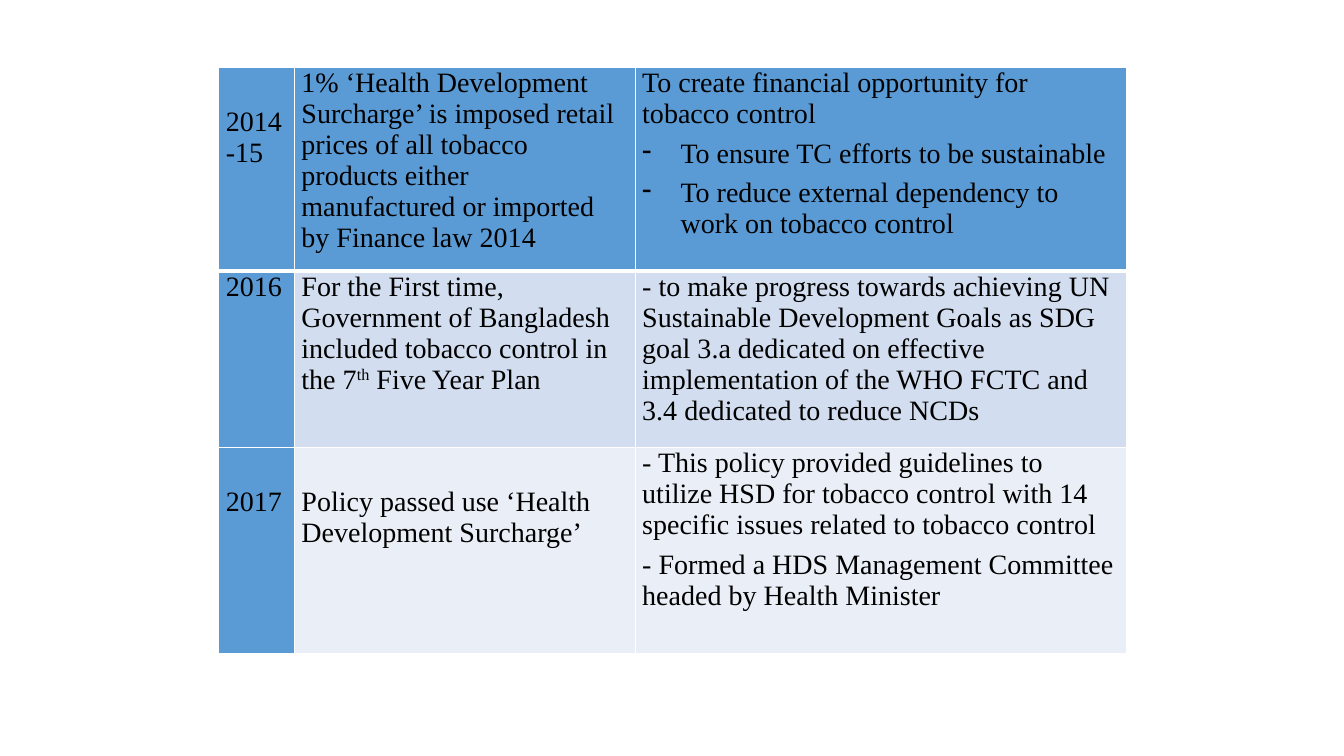
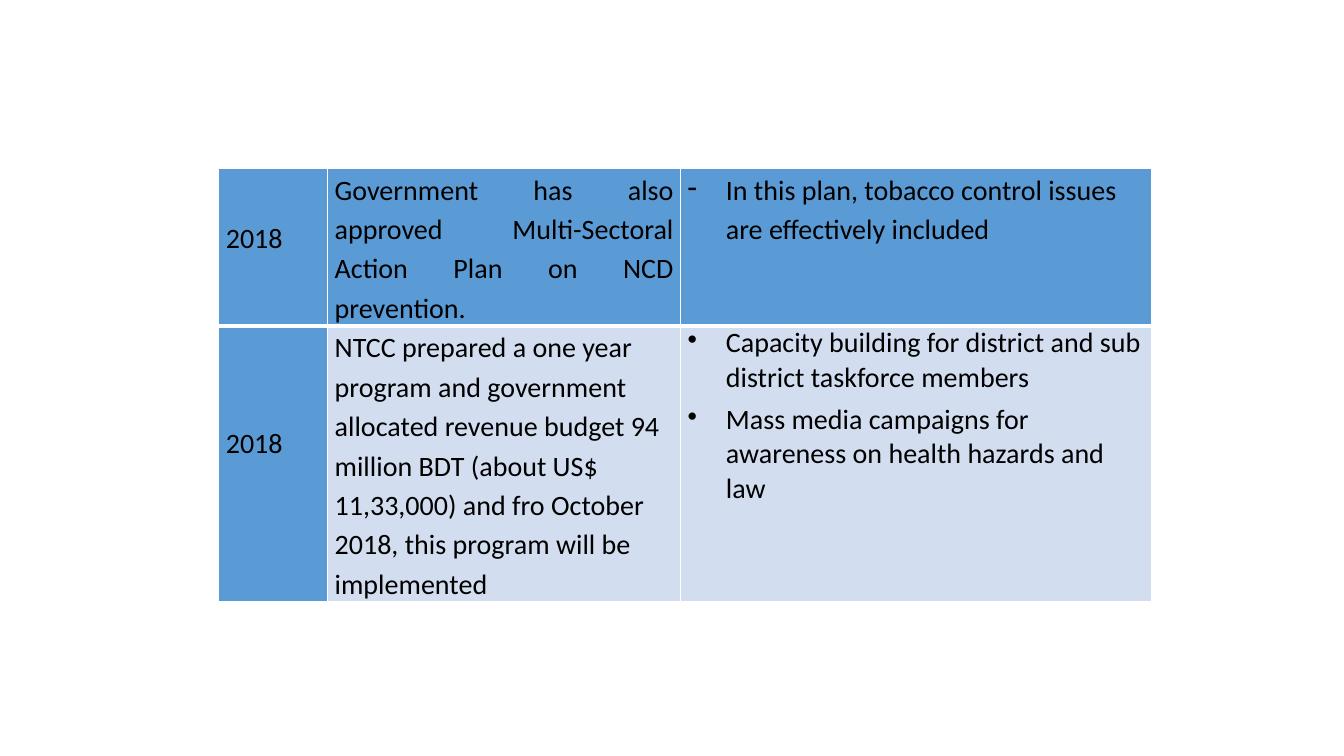
from lxml import etree
from pptx import Presentation
from pptx.dml.color import RGBColor
from pptx.enum.text import PP_ALIGN
from pptx.oxml.ns import qn
from pptx.util import Inches, Pt

LEFT, JUSTIFY = PP_ALIGN.LEFT, PP_ALIGN.JUSTIFY
BLUE, PALE, PALER = "5B9BD5", "D2DEEF", "EAEFF7"
BLACK, WHITE = "000000", "FFFFFF"
ROW_FILLS = [BLUE, PALE, PALER]
SUPERSCRIPT_MARK = "^"

TABLES = [
    {
        "font": "Times New Roman",
        "spacing": 1.0,
        "top": 0.67,
        "columns": [0.75, 3.38, 4.87],
        "rows": [
            (2.02, [
                {"lines": ["2014-15"], "drop": 0.39},
                {"lines": ["1% ‘Health Development Surcharge’ is imposed retail prices of all "
                           "tobacco products either manufactured or imported by Finance law 2014"]},
                {"lines": ["To create financial opportunity for tobacco control",
                           ("-", "To ensure TC efforts to be sustainable"),
                           ("-", "To reduce external dependency to work on tobacco control")]},
            ]),
            (1.75, [
                {"lines": ["2016"]},
                {"lines": ["For the First time, Government of Bangladesh included tobacco "
                           "control in the 7^th^ Five Year Plan"]},
                {"lines": ["- to make progress towards achieving UN Sustainable Development "
                           "Goals as SDG goal 3.a dedicated on effective implementation of the "
                           "WHO FCTC and 3.4 dedicated to reduce NCDs"]},
            ]),
            (2.04, [
                {"lines": ["2017"], "drop": 0.39},
                {"lines": ["Policy passed use ‘Health Development Surcharge’"], "drop": 0.39},
                {"lines": ["- This policy provided guidelines to utilize HSD for tobacco control "
                           "with 14 specific issues related to tobacco control",
                           "- Formed a HDS Management Committee headed by Health Minister"]},
            ]),
        ],
    },
    {
        "font": "Calibri",
        "spacing": 1.15,
        "top": 1.67,
        "columns": [1.08, 3.5, 4.67],
        "rows": [
            (1.55, [
                {"lines": ["2018"], "drop": 0.48},
                {"lines": ["Government has also approved Multi-Sectoral Action Plan on NCD "
                           "prevention."], "align": JUSTIFY},
                {"lines": [("-", "In this plan, tobacco control issues are effectively included")]},
            ]),
            (2.72, [
                {"lines": ["2018"], "drop": 0.95},
                {"lines": ["NTCC prepared a one year program and government allocated revenue "
                           "budget 94 million BDT (about US$ 11,33,000) and fro October 2018, "
                           "this program will be implemented"]},
                {"lines": [("•", "Capacity building for district and sub district taskforce members"),
                           ("•", "Mass media campaigns for awareness on health hazards and law")],
                 "spacing": 1.0},
            ]),
        ],
    },
]


def color(value):
    return RGBColor.from_string(value)


def add_bullet(para, mark):
    properties = para._p.get_or_add_pPr()
    properties.set("marL", str(Inches(0.38)))
    properties.set("indent", str(-Inches(0.38)))
    etree.SubElement(properties, qn("a:buChar")).set("char", mark)


def write_text(para, text, font, spacing=1.0, align=LEFT, bullet=None):
    if bullet:
        add_bullet(para, bullet)
    para.alignment = align
    para.line_spacing = spacing
    para.space_after = Pt(6)
    for position, part in enumerate(text.split(SUPERSCRIPT_MARK)):
        span = para.add_run()
        span.text = part
        span.font.name = font
        span.font.size = Pt(20)
        span.font.color.rgb = color(BLACK)
        if position % 2:
            span._r.get_or_add_rPr().set("baseline", "30000")


def style_cell(cell, fill, bottom_width, drop):
    cell.margin_left = cell.margin_right = Inches(0.07)
    cell.margin_top, cell.margin_bottom = Inches(drop), 0
    properties = cell._tc.get_or_add_tcPr()
    for side, width in (("L", 1), ("R", 1), ("T", 1), ("B", bottom_width)):
        line = etree.SubElement(properties, qn(f"a:ln{side}"), w=str(Pt(width)))
        paint = etree.SubElement(line, qn("a:solidFill"))
        etree.SubElement(paint, qn("a:srgbClr"), val=WHITE)
    cell.fill.solid()
    cell.fill.fore_color.rgb = color(fill)


def fill_cell(cell, content, font, spacing):
    frame = cell.text_frame
    for index, line in enumerate(content["lines"]):
        para = frame.add_paragraph() if index else frame.paragraphs[0]
        bullet, text = line if isinstance(line, tuple) else (None, line)
        write_text(para, text, font, spacing=content.get("spacing", spacing),
                   align=content.get("align", LEFT), bullet=bullet)


def add_timeline(page, data):
    columns, rows = data["columns"], data["rows"]
    table = page.shapes.add_table(
        len(rows), len(columns), Inches(2.17), Inches(data["top"]),
        Inches(sum(columns)), Inches(sum(height for height, cells in rows))).table
    table.first_row = table.horz_banding = False
    for column, width in zip(table.columns, columns):
        column.width = Inches(width)
    for row_index, (height, cells) in enumerate(rows):
        table.rows[row_index].height = Inches(height)
        for column_index, content in enumerate(cells):
            cell = table.cell(row_index, column_index)
            fill = ROW_FILLS[row_index] if column_index else BLUE
            style_cell(cell, fill, 1 if row_index else 3, content.get("drop", 0))
            fill_cell(cell, content, data["font"], data["spacing"])


def main():
    deck = Presentation()
    deck.slide_width, deck.slide_height = Inches(13.33), Inches(7.5)
    for data in TABLES:
        add_timeline(deck.slides.add_slide(deck.slide_layouts[6]), data)
    deck.save("out.pptx")


if __name__ == "__main__":
    main()
